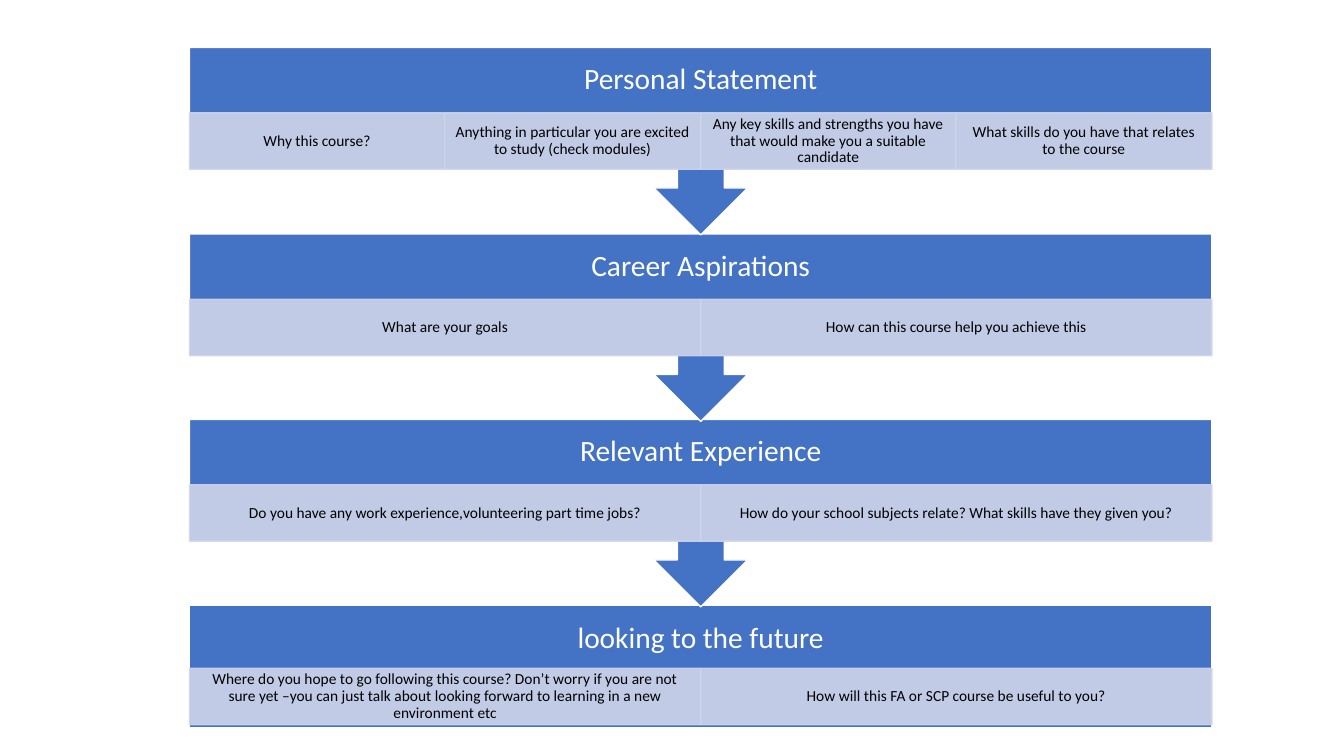
from dataclasses import dataclass

import pptx
import pptx.util
import pptx.dml.color
import pptx.enum.shapes
import pptx.enum.text
import pptx.oxml
import pptx.oxml.ns

SHAPE = pptx.enum.shapes.MSO_SHAPE
PX = 9144


@dataclass(frozen=True)
class Theme:
    font: str = "Calibri"
    bar: str = "4472C4"
    bar_line: str = "FFFFFF"
    bar_text: str = "FFFFFF"
    cell: str = "CFD5EA"
    cell_text: str = "000000"
    cell_alpha: int = 90000
    title_size: int = 21
    cell_size: int = 11


class FlowChart:
    """Draws stage bars, titles and question cells on one slide, in px of 1/100 inch."""

    def __init__(self, slide, theme):
        self.slide = slide
        self.theme = theme

    def box(self, kind, rect, fill, line):
        sp = self.slide.shapes.add_shape(kind, *(v * PX for v in rect))
        sp.shadow.inherit = False
        sp.fill.solid()
        sp.fill.fore_color.rgb = pptx.dml.color.RGBColor.from_string(fill)
        sp.line.color.rgb = pptx.dml.color.RGBColor.from_string(line)
        sp.line.width = pptx.util.Pt(1)
        return sp

    def label(self, sp, text, size, color, inset_x, inset_y):
        tf = sp.text_frame
        tf.word_wrap = True
        tf.vertical_anchor = pptx.enum.text.MSO_ANCHOR.MIDDLE
        tf.margin_left = tf.margin_right = inset_x * PX
        tf.margin_top = tf.margin_bottom = inset_y * PX
        p = tf.paragraphs[0]
        p.alignment = pptx.enum.text.PP_ALIGN.CENTER
        p.line_spacing = 0.9
        r = p.add_run()
        r.text = text
        r.font.name = self.theme.font
        r.font.size = pptx.util.Pt(size)
        r.font.color.rgb = pptx.dml.color.RGBColor.from_string(color)

    def bar(self, rect, has_arrow):
        kind = SHAPE.UP_ARROW_CALLOUT if has_arrow else SHAPE.RECTANGLE
        sp = self.box(kind, rect, self.theme.bar, self.theme.bar_line)
        if has_arrow:
            sp.rotation = 180

    def title(self, rect, text):
        sp = self.slide.shapes.add_textbox(*(v * PX for v in rect))
        self.label(sp, text, self.theme.title_size, self.theme.bar_text, 16, 16)

    def cell(self, rect, text):
        sp = self.box(SHAPE.RECTANGLE, rect, self.theme.cell, self.theme.cell)
        for clr in sp._element.spPr.iter(pptx.oxml.ns.qn("a:srgbClr")):
            alpha = pptx.oxml.parse_xml(f'<a:alpha {pptx.oxml.ns.nsdecls("a")}/>')
            alpha.set("val", str(self.theme.cell_alpha))
            clr.append(alpha)
        self.label(sp, text, self.theme.cell_size, self.theme.cell_text, 9, 2)


STAGES = [
    ("Personal Statement", [
        "Why this course?",
        "Anything in particular you are excited to study (check modules)",
        "Any key skills and strengths you have that would make you a suitable candidate",
        "What skills do you have that relates to the course",
    ]),
    ("Career Aspirations", [
        "What are your goals",
        "How can this course help you achieve this",
    ]),
    ("Relevant Experience", [
        "Do you have any work experience,volunteering part time jobs?",
        "How do your school subjects relate? What skills have they given you?",
    ]),
    ("looking to the future", [
        "Where do you hope to go following this course? Don’t worry if you are not sure yet "
        "–you can just talk about looking forward to learning in a new environment etc",
        "How will this FA or SCP course be useful to you?",
    ]),
]
LEFT, WIDTH = 188, 1014
FIRST_TOP, LAST_TOP = 47, 601
TITLE_H, CELL_H = 65, 56


def main():
    prs = pptx.Presentation()
    prs.slide_width, prs.slide_height = 1333 * PX, 750 * PX
    chart = FlowChart(prs.slides.add_slide(prs.slide_layouts[6]), Theme())
    last = len(STAGES) - 1
    for i, (title, questions) in reversed(list(enumerate(STAGES))):
        top = FIRST_TOP + round(i * (LAST_TOP - FIRST_TOP) / last)
        has_arrow = i < last
        chart.bar((LEFT, top, WIDTH, 186 if has_arrow else 121), has_arrow)
        chart.title((LEFT, top, WIDTH, TITLE_H), title)
        cell_top = top + (TITLE_H if has_arrow else 62)
        edges = [LEFT + WIDTH * n // len(questions) for n in range(len(questions) + 1)]
        for x, right, question in zip(edges, edges[1:], questions):
            chart.cell((x, cell_top, right - x, CELL_H), question)
    prs.save("out.pptx")


if __name__ == "__main__":
    main()
